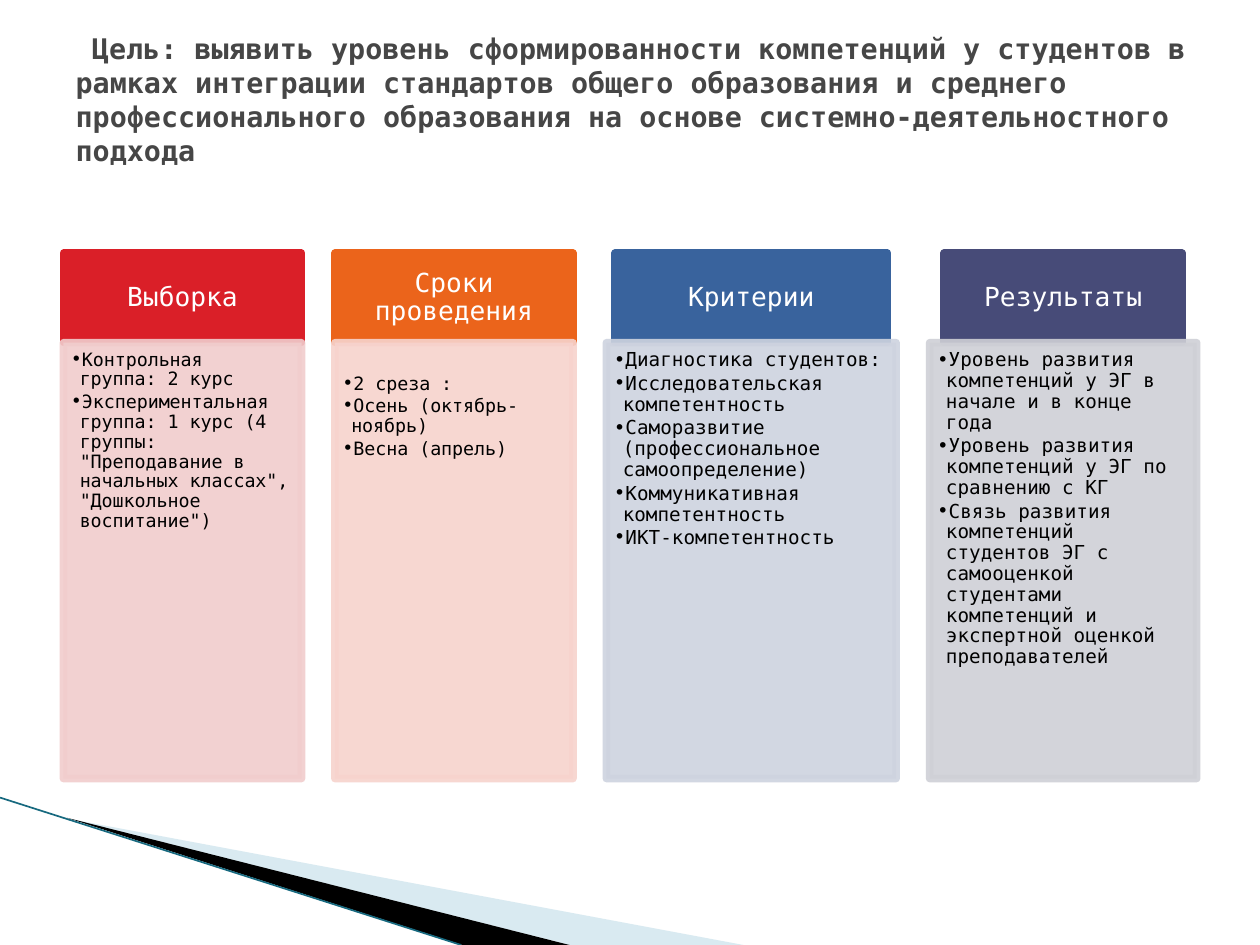
import pptx
import pptx.util
import pptx.dml.color
import pptx.enum.shapes
import pptx.enum.text
import pptx.oxml.ns
from lxml import etree

Inches, Pt = pptx.util.Inches, pptx.util.Pt
PP_ALIGN = pptx.enum.text.PP_ALIGN
ANCHOR = pptx.enum.text.MSO_ANCHOR
qn = pptx.oxml.ns.qn

COLORS = {
    "title": "464646", "white": "FFFFFF", "black": "000000",
    "swoosh": "A0CBDC", "swoosh_line": "17697F",
    "red": "DA1F28", "red_pale": "F1CDCD",
    "orange": "EB641B", "orange_pale": "F7D3CD",
    "blue": "39639D", "blue_pale": "CED3DF",
    "violet": "474B78", "violet_pale": "CFD0D6",
}
FONT = "DejaVu Sans Mono"
COLS, ROWS = 100, 75


class Deck:
    """Style and current slide; positions are in grid columns and rows."""

    def __init__(self):
        self.prs = pptx.Presentation()
        self.prs.slide_width, self.prs.slide_height = Inches(10), Inches(7.5)
        self.s = self.prs.slides.add_slide(self.prs.slide_layouts[5])

    def x(self, col):
        return round(self.prs.slide_width * col / COLS)

    def y(self, row):
        return round(self.prs.slide_height * row / ROWS)

    def box(self, x, y, w, h):
        return self.x(x), self.y(y), self.x(w), self.y(h)

    def paint(self, fmt, color, alpha=100):
        fmt.solid()
        fmt.fore_color.rgb = pptx.dml.color.RGBColor.from_string(COLORS[color])
        if alpha < 100:
            clr = fmt._xPr.find(qn("a:solidFill"))[0]
            etree.SubElement(clr, qn("a:alpha")).set("val", str(alpha * 1000))

    def frame(self, sp, margins, anchor):
        tf = sp.text_frame
        tf.word_wrap = True
        tf.vertical_anchor = anchor
        (tf.margin_left, tf.margin_top,
         tf.margin_right, tf.margin_bottom) = map(Inches, margins)
        return tf

    def font(self, p, size, color, bold=False):
        for r in p.runs:
            r.font.name, r.font.size, r.font.bold = FONT, Pt(size), bold
            self.paint(r.font.fill, color)

    def indent(self, p, left, first):
        pPr = p._p.get_or_add_pPr()
        pPr.set("marL", str(Inches(left)))
        pPr.set("indent", str(Inches(first)))
        return pPr

    def title(self, text, x, y, w, h):
        sp = self.s.shapes.title
        sp.left, sp.top, sp.width, sp.height = self.box(x, y, w, h)
        tf = self.frame(sp, (0.1, 0, 0.1, 0.27), ANCHOR.MIDDLE)
        tf.text = text
        p = tf.paragraphs[0]
        p.alignment = PP_ALIGN.LEFT
        self.indent(p, 0, 0.13)
        self.font(p, 16.2, "title", True)

    def rect(self, x, y, w, h, color, alpha=100):
        sp = self.s.shapes.add_shape(
            pptx.enum.shapes.MSO_SHAPE.RECTANGLE, *self.box(x, y, w, h))
        sp.shadow.inherit = False
        self.paint(sp.fill, color, alpha)
        self.paint(sp.line.fill, color, alpha)
        sp.line.width = Pt(4.33)
        return sp

    def heading(self, text, x, y, w, h, color):
        sp = self.rect(x, y, w, h, color)
        tf = self.frame(sp, (0.12, 0.07, 0.12, 0.07), ANCHOR.MIDDLE)
        tf.text = text
        p = tf.paragraphs[0]
        p.alignment, p.line_spacing = PP_ALIGN.CENTER, 0.9
        self.font(p, 15, "white")

    def bullets(self, items, x, y, w, h, color, size, top):
        sp = self.rect(x, y, w, h, color, 90)
        tf = self.frame(sp, (0.06, top, 0.09, 0.1), ANCHOR.TOP)
        tf.text = "\n".join(items)
        for p in tf.paragraphs:
            p.alignment, p.line_spacing = PP_ALIGN.LEFT, 0.9
            p.space_after = Pt(size * 0.15)
            pPr = self.indent(p, 0.07, -0.07)
            etree.SubElement(pPr, qn("a:buFont")).set("typeface", FONT)
            etree.SubElement(pPr, qn("a:buChar")).set("char", "•")
            self.font(p, size, "black")

    def polygon(self, points, color, alpha=100):
        start, *rest = [(self.x(x), self.y(y)) for x, y in points]
        fb = self.s.shapes.build_freeform(*start)
        fb.add_line_segments(rest, close=True)
        sp = fb.convert_to_shape()
        sp.shadow.inherit = False
        self.paint(sp.fill, color, alpha)
        sp.line.fill.background()

    def line(self, x1, y1, x2, y2, color, width):
        c = self.s.shapes.add_connector(
            pptx.enum.shapes.MSO_CONNECTOR.STRAIGHT,
            self.x(x1), self.y(y1), self.x(x2), self.y(y2))
        self.paint(c.line.fill, color)
        c.line.width = Pt(width)
        etree.SubElement(c._element.spPr, qn("a:effectLst"))


# color, heading, heading width, body width, text size, top margin, items
COLUMNS = [
    ("red", "Выборка", 18.9, 18.9, 10.5, 0.06, [
        "Контрольная группа: 2 курс",
        "Экспериментальная группа: 1 курс (4 группы: \"Преподавание в "
        "начальных классах\", \"Дошкольное воспитание\")"]),
    ("orange", "Сроки проведения", 18.9, 18.9, 10.5, 0.25, [
        "2 среза :", "Осень (октябрь-ноябрь)", "Весна (апрель)"]),
    ("blue", "Критерии", 21.6, 23, 11, 0.06, [
        "Диагностика студентов:",
        "Исследовательская компетентность",
        "Саморазвитие (профессиональное самоопределение)",
        "Коммуникативная компетентность",
        "ИКТ-компетентность"]),
    ("violet", "Результаты", 18.9, 21.2, 11, 0.06, [
        "Уровень развития компетенций у ЭГ в начале и в конце года",
        "Уровень развития компетенций у ЭГ по сравнению с КГ",
        "Связь развития компетенций студентов ЭГ с самооценкой студентами "
        "компетенций и экспертной оценкой преподавателей"]),
]
LEFT, GAP = 5.03, 2.65
HEAD_TOP, HEAD_H, BODY_H = 20.1, 7.1, 34.6


def main():
    deck = Deck()

    # Corner decoration
    deck.polygon([(5.5, 65), (59, 75), (45.2, 75)], "swoosh", 40)
    deck.polygon([(5.3, 64.9), (45.2, 75), (36.7, 75)], "black")
    deck.line(0, 63.3, 36.6, 75, "swoosh_line", 0.95)

    # Title
    deck.title("Цель: выявить уровень сформированности компетенций у студентов "
               "в рамках интеграции стандартов общего образования и среднего "
               "профессионального образования на основе "
               "системно-деятельностного подхода", 5, 3, 90, 12.5)

    # Four columns, each heading centred over its list
    x = LEFT
    for color, head, head_w, body_w, size, top, items in COLUMNS:
        deck.heading(head, x + (body_w - head_w) / 2, HEAD_TOP,
                     head_w, HEAD_H, color)
        deck.bullets(items, x, HEAD_TOP + HEAD_H, body_w, BODY_H,
                     color + "_pale", size, top)
        x += body_w + GAP

    deck.prs.save("out.pptx")


if __name__ == "__main__":
    main()
